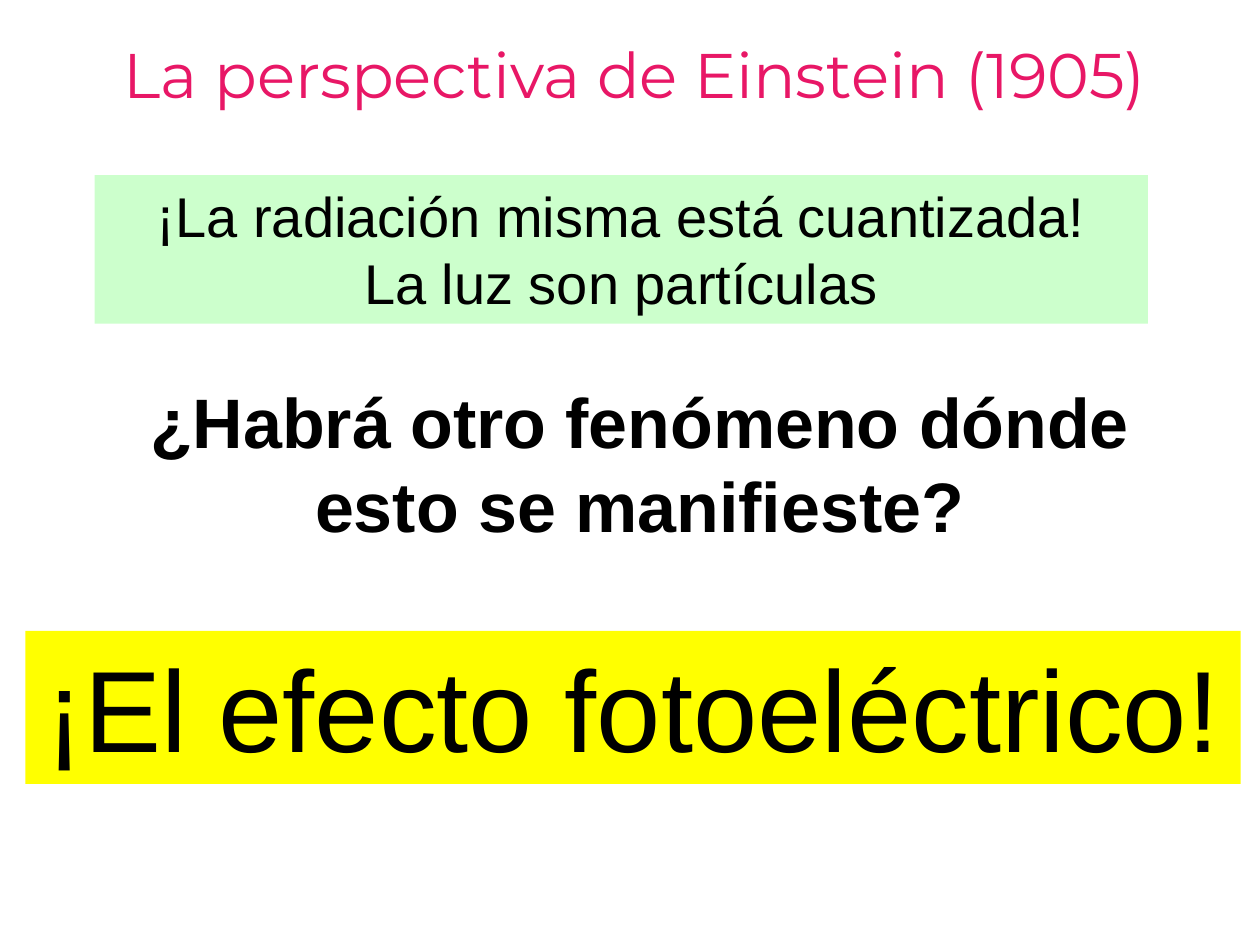
"""Build the slide on Einstein's 1905 view of quantized radiation."""
from pptx import Presentation
from pptx.dml.color import RGBColor
from pptx.enum.shapes import MSO_SHAPE as Shape
from pptx.enum.text import MSO_ANCHOR as Anchor, PP_ALIGN as Align
from pptx.util import Pt

BLACK = RGBColor(0x00, 0x00, 0x00)
PINK = RGBColor(0xE8, 0x17, 0x66)
GREEN = RGBColor(0xCC, 0xFF, 0xCC)
YELLOW = RGBColor(0xFF, 0xFF, 0x00)

STATEMENTS = [
    ("¡La radiación misma está cuantizada!\vLa luz son partículas",
     (54, 100, 602, 85), dict(size=32, fill=GREEN)),
    ("¿Habrá otro fenómeno dónde esto se manifieste?",
     (70.5, 213, 590, 104.5), dict(size=40, bold=True)),
    ("¡El efecto fotoeléctrico!",
     (14.5, 360.5, 694.5, 87.5), dict(size=66, fill=YELLOW)),
    ("La perspectiva de Einstein (1905)",
     (39.5, 16.5, 646.5, 67.5),
     dict(size=36, font="Montserrat", color=PINK, wrap=False)),
]


def add_statement(slide, text, box, *, size, font="Arial", color=BLACK,
                  bold=False, fill=None, wrap=True):
    place = [Pt(length) for length in box]
    if fill is None:
        statement = slide.shapes.add_textbox(*place)
    else:
        statement = slide.shapes.add_shape(Shape.RECTANGLE, *place)
        statement.shadow.inherit = False
        statement.fill.solid()
        statement.fill.fore_color.rgb = fill
        statement.line.fill.background()
    frame = statement.text_frame
    frame.word_wrap = wrap
    frame.vertical_anchor = Anchor.TOP
    paragraph = frame.paragraphs[0]
    paragraph.text = text
    paragraph.alignment = Align.CENTER
    for run in paragraph.runs:
        run.font.name = font
        run.font.size = Pt(size)
        run.font.bold = bold
        run.font.color.rgb = color


def main():
    deck = Presentation()
    deck.slide_width, deck.slide_height = Pt(720), Pt(540)
    slide = deck.slides.add_slide(deck.slide_layouts[6])
    for text, box, style in STATEMENTS:
        add_statement(slide, text, box, **style)
    deck.save("out.pptx")


if __name__ == "__main__":
    main()
